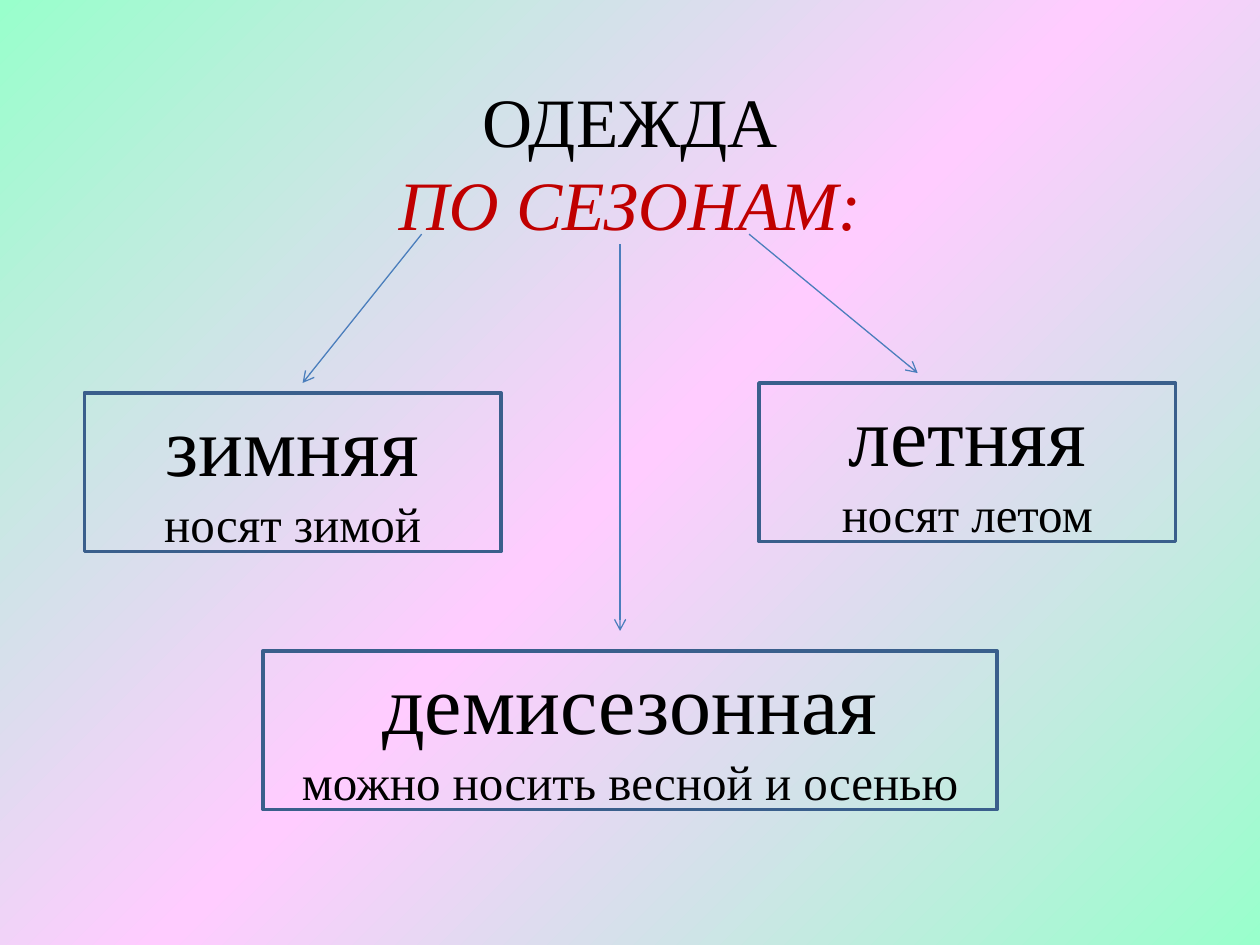
"""Build a slide that sorts clothing by season."""
from lxml.etree import SubElement
from pptx import Presentation
from pptx.dml.color import RGBColor
from pptx.enum.shapes import MSO_CONNECTOR as Connector, MSO_SHAPE as Shape
from pptx.enum.text import MSO_ANCHOR as Anchor, PP_ALIGN as Align
from pptx.oxml.ns import qn
from pptx.util import Inches, Mm, Pt

BLACK = RGBColor(0x00, 0x00, 0x00)
RED = RGBColor(0xC0, 0x00, 0x00)
BORDER = RGBColor(0x3A, 0x5F, 0x8C)
ARROW = RGBColor(0x4B, 0x7E, 0xBC)
MINT = RGBColor(0x99, 0xFF, 0xCC)
PINK = RGBColor(0xFF, 0xCC, 0xFF)
CELL, LEFT, TOP = Mm(2), Mm(1), Mm(1.2)


def write(paragraph, text, size, color=BLACK, italic=None, spacing=None):
    paragraph.alignment = Align.CENTER
    paragraph.line_spacing = spacing
    run = paragraph.add_run()
    run.text = text
    run.font.name = "Times New Roman"
    run.font.size = Pt(size)
    run.font.color.rgb = color
    run.font.italic = italic


def grid(column, row):
    return LEFT + column * CELL, TOP + row * CELL


deck = Presentation()
deck.slide_width, deck.slide_height = Inches(10), Inches(7.5)
slide = deck.slides.add_slide(deck.slide_layouts[6])

backdrop = slide.background.fill
backdrop.gradient()
gradient = backdrop._fill._gradFill
gradient.clear()
stops = SubElement(gradient, qn("a:gsLst"))
for share, color in ((0, MINT), (50, PINK), (100, MINT)):
    stop = SubElement(stops, qn("a:gs"), pos=str(share * 1000))
    SubElement(stop, qn("a:srgbClr"), val=str(color))
SubElement(gradient, qn("a:lin"), ang=str(45 * 60000), scaled="0")

heading = slide.shapes.add_textbox(Inches(0.5), Inches(0.3), Inches(9), Inches(1.25)).text_frame
heading.word_wrap = True
heading.vertical_anchor = Anchor.TOP
heading.margin_top = Inches(0.32)
write(heading.paragraphs[0], "ОДЕЖДА", 39.6, spacing=Pt(47.5))
write(heading.add_paragraph(), "ПО СЕЗОНАМ:", 39.6, color=RED, italic=True, spacing=Pt(47.5))

seasons = (
    (8, 39, 42, "зимняя", "носят зимой"),
    (76, 38, 42, "летняя", "носят летом"),
    (26, 65, 74, "демисезонная", "можно носить весной и осенью"),
)
for column, row, columns, season, usage in seasons:
    box = slide.shapes.add_shape(Shape.RECTANGLE, *grid(column, row), columns * CELL, 16 * CELL)
    box.shadow.inherit = False
    box.fill.background()
    box.line.color.rgb = BORDER
    box.line.width = Pt(2)
    label = box.text_frame
    label.word_wrap = True
    label.vertical_anchor = Anchor.MIDDLE
    write(label.paragraphs[0], season, 48)
    write(label.add_paragraph(), usage, 28)

for start, end in (((42, 23), (30, 38)), ((62, 24), (62, 63)), ((75, 23), (92, 37))):
    arrow = slide.shapes.add_connector(Connector.STRAIGHT, *grid(*start), *grid(*end))
    arrow.line.color.rgb = ARROW
    arrow.line.width = Pt(0.75)
    SubElement(arrow.line._get_or_add_ln(), qn("a:tailEnd"), type="arrow")
    SubElement(arrow._element.spPr, qn("a:effectLst"))

deck.save("out.pptx")
